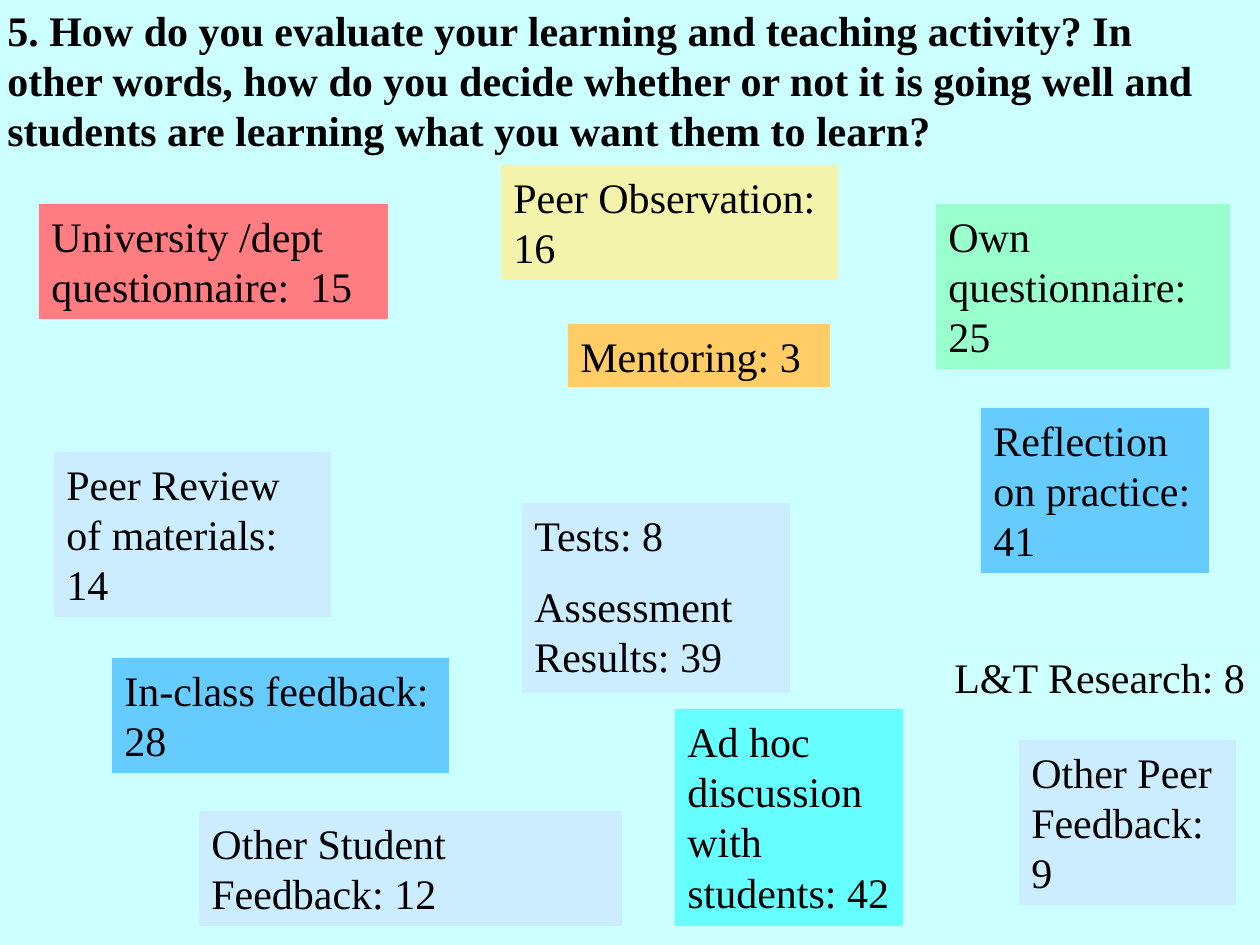
from pptx import Presentation
from pptx.dml.color import RGBColor
from pptx.enum.text import MSO_AUTO_SIZE
from pptx.util import Emu, Pt

PX = 914400 // 126
BLACK = RGBColor(0x00, 0x00, 0x00)
BACKGROUND = RGBColor(0xCC, 0xFF, 0xFF)
BLUE = RGBColor(0x66, 0xCC, 0xFF)
PALE_BLUE = RGBColor(0xCC, 0xEC, 0xFF)
YELLOW = RGBColor(0xF3, 0xF3, 0xAB)
PALE_CYAN = RGBColor(0xCD, 0xFF, 0xFD)
RED = RGBColor(0xFF, 0x7C, 0x80)
CYAN = RGBColor(0x66, 0xFF, 0xFF)
GREEN = RGBColor(0x99, 0xFF, 0xCC)
ORANGE = RGBColor(0xFF, 0xCC, 0x66)

QUESTION = (
    "5. How do you evaluate your learning and teaching activity? "
    "In other words, how do you decide whether or not it is going well "
    "and students are learning what you want them to learn?"
)

prs = Presentation()
prs.slide_width = Emu(1260 * PX)
prs.slide_height = Emu(945 * PX)
s = prs.slides.add_slide(prs.slide_layouts[6])
s.background.fill.solid()
s.background.fill.fore_color.rgb = BACKGROUND


def add_box(x, y, w, h, text, fill=None, bold=False):
    sp = s.shapes.add_textbox(*(Emu(v * PX) for v in (x, y, w, h)))
    if fill is not None:
        sp.fill.solid()
        sp.fill.fore_color.rgb = fill
    tf = sp.text_frame
    tf.word_wrap = True
    tf.auto_size = MSO_AUTO_SIZE.SHAPE_TO_FIT_TEXT
    tf.text = text
    for i, p in enumerate(tf.paragraphs):
        p.space_before = Pt(12 if i else 0)
        for r in p.runs:
            r.font.name = "Times New Roman"
            r.font.size = Pt(24)
            r.font.bold = bold
            r.font.color.rgb = BLACK


answers = [
    (981, 408, 228, 165, "Reflection on practice: 41", BLUE),
    (501, 165, 337, 115, "Peer Observation: 16", YELLOW),
    (942, 645, 318, 63, "L&T Research: 8", PALE_CYAN),
    (39, 204, 349, 115, "University /dept questionnaire:  15", RED),
    (675, 709, 228, 217, "Ad hoc discussion with students: 42", CYAN),
    (522, 503, 268, 190, "Tests: 8\nAssessment Results: 39", PALE_BLUE),
    (936, 204, 294, 165, "Own questionnaire: 25", GREEN),
    (568, 324, 262, 63, "Mentoring: 3", ORANGE),
    (112, 658, 337, 115, "In-class feedback: 28", BLUE),
    (54, 452, 277, 165, "Peer Review of materials: 14", PALE_BLUE),
    (199, 811, 423, 115, "Other Student Feedback: 12", PALE_BLUE),
    (1019, 740, 217, 165, "Other Peer Feedback: 9", PALE_BLUE),
]
for answer in answers:
    add_box(*answer)
add_box(-5, -2, 1235, 165, QUESTION, bold=True)

prs.save("out.pptx")
